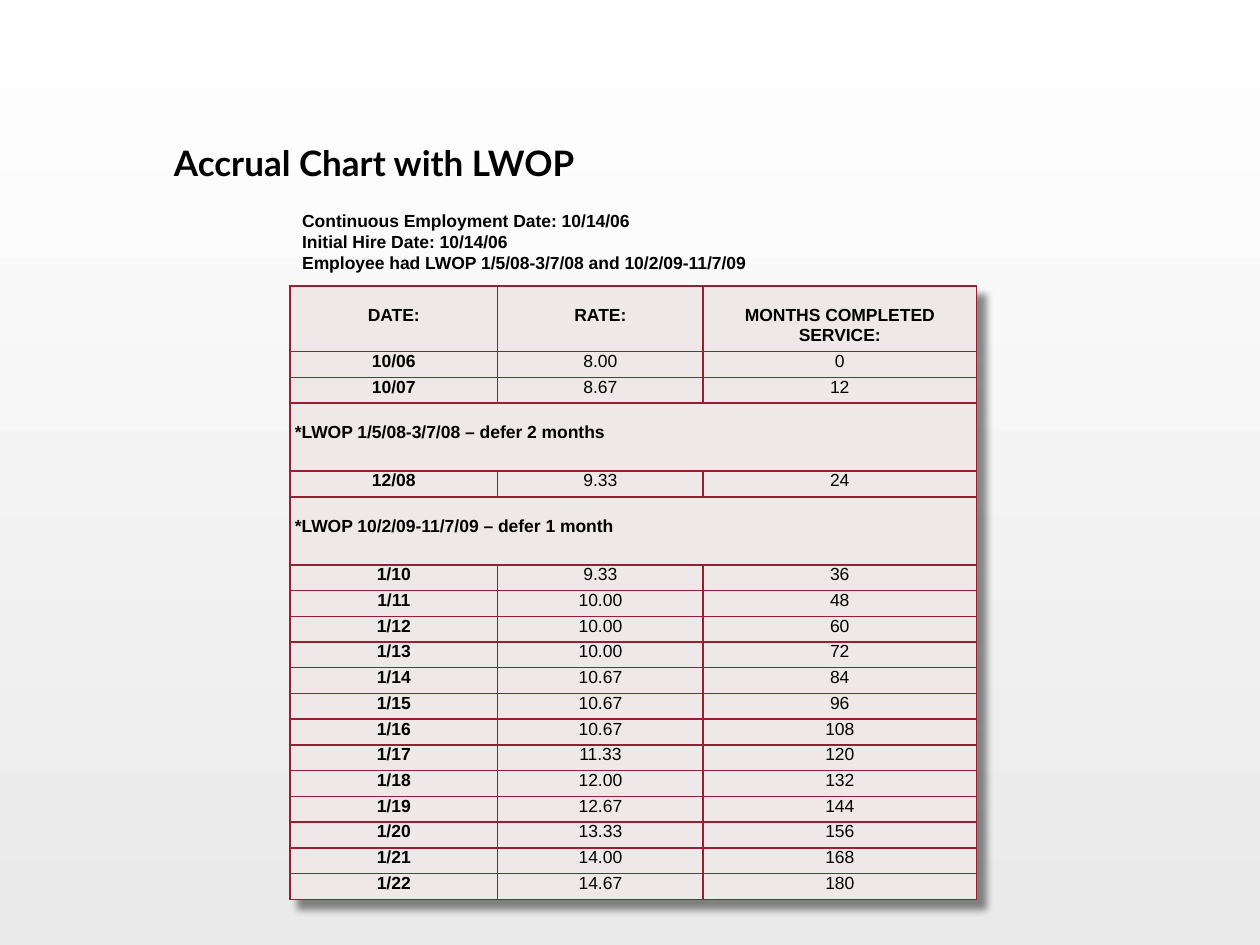
from lxml import etree
from pptx import Presentation
from pptx.dml.color import RGBColor
from pptx.enum.text import MSO_ANCHOR, MSO_AUTO_SIZE, PP_ALIGN
from pptx.oxml import parse_xml
from pptx.oxml.ns import nsdecls, qn
from pptx.util import Inches, Pt

LEFT, CENTER = PP_ALIGN.LEFT, PP_ALIGN.CENTER
TOP, BOTTOM = MSO_ANCHOR.TOP, MSO_ANCHOR.BOTTOM
GROW = MSO_AUTO_SIZE.SHAPE_TO_FIT_TEXT
TITLE_ONLY = 5
COLS, ROWS = 100, 75
COLORS = {"text": "000000", "cell": "EFE8E8", "border": "981E32",
          "bottom": "EAEAEA", "top": "FFFFFF"}

TITLE = "Accrual Chart with LWOP"
FACTS = ["Continuous Employment Date: 10/14/06",
         "Initial Hire Date: 10/14/06",
         "Employee had LWOP 1/5/08-3/7/08 and 10/2/09-11/7/09"]
HEADER = ("DATE:", "RATE:", "MONTHS COMPLETED SERVICE:")
ACCRUALS = [
    ("10/06", "8.00", "0"),
    ("10/07", "8.67", "12"),
    ("*LWOP 1/5/08-3/7/08 – defer 2 months",),
    ("12/08", "9.33", "24"),
    ("*LWOP 10/2/09-11/7/09 – defer 1 month",),
    ("1/10", "9.33", "36"),
    ("1/11", "10.00", "48"),
    ("1/12", "10.00", "60"),
    ("1/13", "10.00", "72"),
    ("1/14", "10.67", "84"),
    ("1/15", "10.67", "96"),
    ("1/16", "10.67", "108"),
    ("1/17", "11.33", "120"),
    ("1/18", "12.00", "132"),
    ("1/19", "12.67", "144"),
    ("1/20", "13.33", "156"),
    ("1/21", "14.00", "168"),
    ("1/22", "14.67", "180"),
]


class Deck:
    """Style and current slide, measured on a grid of COLS by ROWS."""

    def __init__(self):
        self.prs = Presentation()
        self.prs.slide_width, self.prs.slide_height = Inches(10), Inches(7.5)
        self.s = self.prs.slides.add_slide(self.prs.slide_layouts[TITLE_ONLY])

    def x(self, cols):
        return int(self.prs.slide_width * cols / COLS)

    def y(self, rows):
        return int(self.prs.slide_height * rows / ROWS)

    def box(self, left, top, width, height):
        return self.x(left), self.y(top), self.x(width), self.y(height)

    def color(self, name):
        return RGBColor.from_string(COLORS[name])

    def font(self, p, size=10, name="Arial", bold=True):
        p.font.size, p.font.name, p.font.bold = Pt(size), name, bold
        p.font.color.rgb = self.color("text")

    def background(self):
        fill = self.s.background.fill
        fill.gradient()
        fill.gradient_angle = 90
        for stop, name in zip(fill.gradient_stops, ("bottom", "top")):
            stop.color.rgb = self.color(name)

    def title(self, text, *place):
        sp = self.s.shapes.title
        sp.left, sp.top, sp.width, sp.height = self.box(*place)
        tf = sp.text_frame
        tf.text = text
        tf.vertical_anchor, tf.auto_size = BOTTOM, GROW
        tf.margin_left = tf.margin_right = Inches(0.5)
        p = tf.paragraphs[0]
        p.alignment, p.line_spacing = LEFT, 0.9
        self.font(p, 20, "Lato")

    def text(self, lines, *place):
        tf = self.s.shapes.add_textbox(*self.box(*place)).text_frame
        tf.word_wrap, tf.auto_size = False, GROW
        tf.text = "\n".join(lines)
        for p in tf.paragraphs:
            self.font(p)

    def cell(self, cell, text, align, bold, drop):
        cell.text = text
        cell.vertical_anchor = TOP
        cell.margin_left = cell.margin_right = Inches(0.04)
        cell.margin_top, cell.margin_bottom = Inches(drop), 0
        p = cell.text_frame.paragraphs[0]
        p.alignment = align
        self.font(p, bold=bold)

    def frame(self, cell):
        cell.fill.solid()
        cell.fill.fore_color.rgb = self.color("cell")
        pr = cell._tc.get_or_add_tcPr()
        for i, side in enumerate(("lnL", "lnR", "lnT", "lnB")):
            ln = parse_xml(f'<a:{side} {nsdecls("a")} w="{Pt(1)}"><a:solidFill>'
                           f'<a:srgbClr val="{COLORS["border"]}"/>'
                           f'</a:solidFill></a:{side}>')
            pr.insert(i, ln)

    def shadow(self, table):
        effects = etree.Element(qn("a:effectLst"))
        effects.append(parse_xml(
            f'<a:outerShdw {nsdecls("a")} blurRad="50800" dist="88900" '
            'dir="2700000" algn="tl" rotWithShape="0"><a:srgbClr val="000000">'
            '<a:alpha val="45000"/></a:srgbClr></a:outerShdw>'))
        table._tbl.tblPr.insert(0, effects)

    def table(self, header, rows, widths, head, note, *place):
        lines = [header, *rows]
        table = self.s.shapes.add_table(len(lines), len(header),
                                        *self.box(*place)).table
        notes = sum(len(line) == 1 for line in rows)
        plain = (place[3] - head - notes * note) / (len(rows) - notes)
        for column, width in zip(table.columns, widths):
            column.width = self.x(width)
        for r, line in enumerate(lines):
            is_head, is_note = r == 0, len(line) == 1
            table.rows[r].height = self.y(head if is_head else note if is_note else plain)
            for c in range(len(header)):
                self.frame(table.cell(r, c))
            if is_note:
                table.cell(r, 0).merge(table.cell(r, len(header) - 1))
            for c, text in enumerate(line):
                self.cell(table.cell(r, c), text, LEFT if is_note else CENTER,
                          is_head or c == 0, 0.16 if is_head or is_note else 0)
        self.shadow(table)


def main():
    deck = Deck()
    deck.background()
    deck.title(TITLE, 8.8, 11.1, 85, 4)
    deck.table(HEADER, ACCRUALS, (16.5, 16.3, 21.7), 5.2, 5.4, 23, 22.7, 54.4, 48.7)
    deck.text(FACTS, 23, 16.2, 37.6, 6.1)
    deck.prs.save("out.pptx")


if __name__ == "__main__":
    main()
